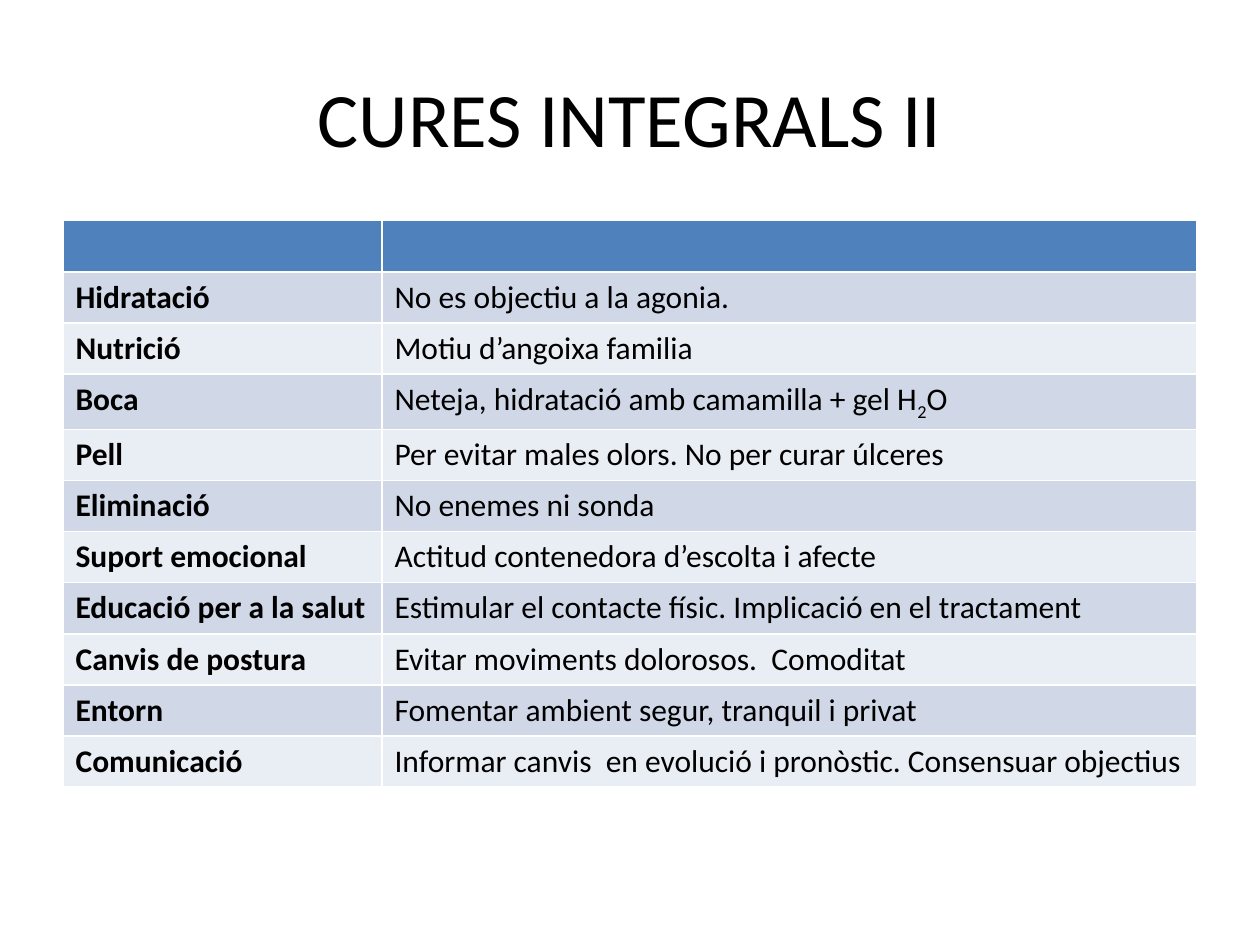
"""Build the slide on comprehensive care, part II, with its table of care areas."""
import pptx
import pptx.dml.color
import pptx.enum.text
import pptx.util

Cm, Pt = pptx.util.Cm, pptx.util.Pt
RGBColor = pptx.dml.color.RGBColor

HEADING = "CURES INTEGRALS II"
CARE_AREAS = [
    ("Hidratació", ["No es objectiu a la agonia."]),
    ("Nutrició", ["Motiu d’angoixa familia"]),
    ("Boca", ["Neteja, hidratació amb camamilla + gel H", "2", "O"]),
    ("Pell", ["Per evitar males olors. No per curar úlceres"]),
    ("Eliminació", ["No enemes ni sonda"]),
    ("Suport emocional", ["Actitud contenedora d’escolta i afecte"]),
    ("Educació per a la salut", ["Estimular el contacte físic. Implicació en el tractament"]),
    ("Canvis de postura", ["Evitar moviments dolorosos.  Comoditat"]),
    ("Entorn", ["Fomentar ambient segur, tranquil i privat"]),
    ("Comunicació", ["Informar canvis  en evolució i pronòstic. Consensuar objectius"]),
]
SUBSCRIPTS = {"2"}

FONT = "Calibri"
BLACK = RGBColor(0x00, 0x00, 0x00)
HEADER_BLUE = RGBColor(0x4F, 0x81, 0xBD)
BANDS = [RGBColor(0xD0, 0xD8, 0xE8), RGBColor(0xE9, 0xED, 0xF4)]

LEFT, TABLE_TOP = Cm(1.27), Cm(4.45)
COLUMN_WIDTHS = [Cm(6.43), Cm(16.43)]
ROW_HEIGHT = Cm(1.03)


def add_run(paragraph, text, size, bold=False):
    run = paragraph.add_run()
    run.text = text
    run.font.name = FONT
    run.font.size = Pt(size)
    run.font.bold = bold
    run.font.color.rgb = BLACK
    if text in SUBSCRIPTS:
        run.font._element.set("baseline", "-25000")


def fill_cell(cell, color):
    cell.fill.solid()
    cell.fill.fore_color.rgb = color


def add_heading(slide):
    heading = slide.shapes.title
    heading.left, heading.top = LEFT, Cm(0.76)
    heading.width, heading.height = sum(COLUMN_WIDTHS), Cm(3.18)
    heading.text_frame.vertical_anchor = pptx.enum.text.MSO_ANCHOR.MIDDLE
    line = heading.text_frame.paragraphs[0]
    line.alignment = pptx.enum.text.PP_ALIGN.CENTER
    add_run(line, HEADING, 44)


def add_care_table(slide):
    row_count = len(CARE_AREAS) + 1
    care = slide.shapes.add_table(
        row_count, len(COLUMN_WIDTHS), LEFT, TABLE_TOP,
        sum(COLUMN_WIDTHS), ROW_HEIGHT * row_count).table
    for column, width in zip(care.columns, COLUMN_WIDTHS):
        column.width = width
    for row in care.rows:
        row.height = ROW_HEIGHT
    for header in care.rows[0].cells:
        fill_cell(header, HEADER_BLUE)
    for index, (area, advice) in enumerate(CARE_AREAS):
        for column, parts in enumerate(([area], advice)):
            cell = care.cell(index + 1, column)
            fill_cell(cell, BANDS[index % len(BANDS)])
            for part in parts:
                add_run(cell.text_frame.paragraphs[0], part, 18, bold=column == 0)


def main():
    deck = pptx.Presentation()
    deck.slide_width, deck.slide_height = Cm(25.4), Cm(19.05)
    slide = deck.slides.add_slide(deck.slide_layouts[5])
    add_heading(slide)
    add_care_table(slide)
    deck.save("out.pptx")


if __name__ == "__main__":
    main()
